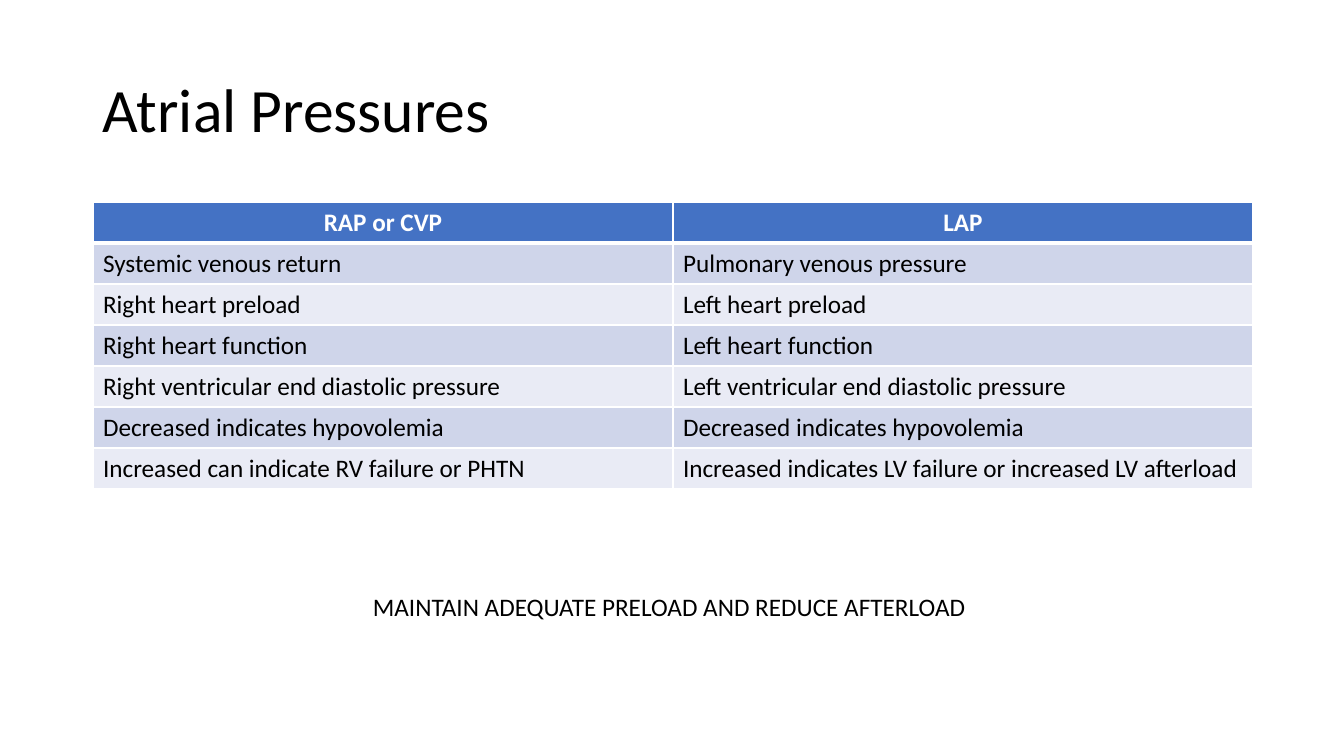
import pptx
import pptx.dml.color
import pptx.enum.text
import pptx.oxml
import pptx.oxml.ns
import pptx.util

TITLE = "Atrial Pressures"
PRESSURES = [
    ("RAP or CVP", "LAP"),
    ("Systemic venous return", "Pulmonary venous pressure"),
    ("Right heart preload", "Left heart preload"),
    ("Right heart function", "Left heart function"),
    ("Right ventricular end diastolic pressure", "Left ventricular end diastolic pressure"),
    ("Decreased indicates hypovolemia", "Decreased indicates hypovolemia"),
    ("Increased can indicate RV failure or PHTN",
     "Increased indicates LV failure or increased LV afterload"),
]
TAKEAWAY = "MAINTAIN ADEQUATE PRELOAD AND REDUCE AFTERLOAD"

THEME = {
    "font": "Calibri", "title_size": 44, "body_size": 18,
    "text": "000000", "header_text": "FFFFFF", "header_fill": "4472C4",
    "bands": ("CFD5EA", "E9EBF5"), "rule": "FFFFFF",
}
SLIDE_W, SLIDE_H = 1344, 756
LEFT, COL_W, ROW_H = 93, 580, 41
TITLE_BOX = (LEFT, 40, 2 * COL_W, 146)
TABLE_TOP = 202
TAKEAWAY_BOX = (363, 586, 619, 40)
ALIGN = pptx.enum.text.PP_ALIGN
ANCHOR = pptx.enum.text.MSO_ANCHOR


def px(n):
    return pptx.util.Emu(round(n * 914400 / 100.8))


def rgb(color):
    return pptx.dml.color.RGBColor.from_string(color)


def write(tf, text, size, color, bold=False, **paragraph_format):
    p = tf.paragraphs[0]
    for name, value in paragraph_format.items():
        setattr(p, name, value)
    r = p.add_run()
    r.text = text
    values = {"name": THEME["font"], "size": pptx.util.Pt(size), "bold": bold}
    for name, value in values.items():
        setattr(r.font, name, value)
    r.font.color.rgb = rgb(color)


def add_text(slide, box, text, size, frame_format, **paragraph_format):
    tf = slide.shapes.add_textbox(*map(px, box)).text_frame
    for name, value in frame_format.items():
        setattr(tf, name, value)
    write(tf, text, size, THEME["text"], **paragraph_format)


def set_borders(cell, widths):
    """Draw the cell borders; they must precede the fill in tcPr."""
    tc_pr = cell._tc.get_or_add_tcPr()
    for i, (side, width) in enumerate(widths.items()):
        tc_pr.insert(i, pptx.oxml.parse_xml(
            f'<a:{side} {pptx.oxml.ns.nsdecls("a")} w="{pptx.util.Pt(width)}">'
            f'<a:solidFill><a:srgbClr val="{THEME["rule"]}"/></a:solidFill></a:{side}>'))


def add_pressure_table(slide):
    rows, cols = len(PRESSURES), len(PRESSURES[0])
    table = slide.shapes.add_table(
        rows, cols, px(LEFT), px(TABLE_TOP), px(cols * COL_W), px(rows * ROW_H)).table
    for i, labels in enumerate(PRESSURES):
        header = i == 0
        fill = THEME["header_fill"] if header else THEME["bands"][(i - 1) % 2]
        color = THEME["header_text"] if header else THEME["text"]
        for j, label in enumerate(labels):
            cell = table.cell(i, j)
            cell.fill.solid()
            cell.fill.fore_color.rgb = rgb(fill)
            set_borders(cell, {"lnL": 1, "lnR": 1, "lnT": 3 if i == 1 else 1,
                               "lnB": 3 if header else 1})
            write(cell.text_frame, label, THEME["body_size"], color, bold=header,
                  alignment=ALIGN.CENTER if header else ALIGN.LEFT)


def main():
    prs = pptx.Presentation()
    prs.slide_width, prs.slide_height = px(SLIDE_W), px(SLIDE_H)
    slide = prs.slides.add_slide(prs.slide_layouts[6])
    add_text(slide, TITLE_BOX, TITLE, THEME["title_size"],
             {"word_wrap": True, "vertical_anchor": ANCHOR.MIDDLE}, line_spacing=0.9)
    add_pressure_table(slide)
    add_text(slide, TAKEAWAY_BOX, TAKEAWAY, THEME["body_size"],
             {"word_wrap": False, "auto_size": pptx.enum.text.MSO_AUTO_SIZE.SHAPE_TO_FIT_TEXT})
    prs.save("out.pptx")


if __name__ == "__main__":
    main()
